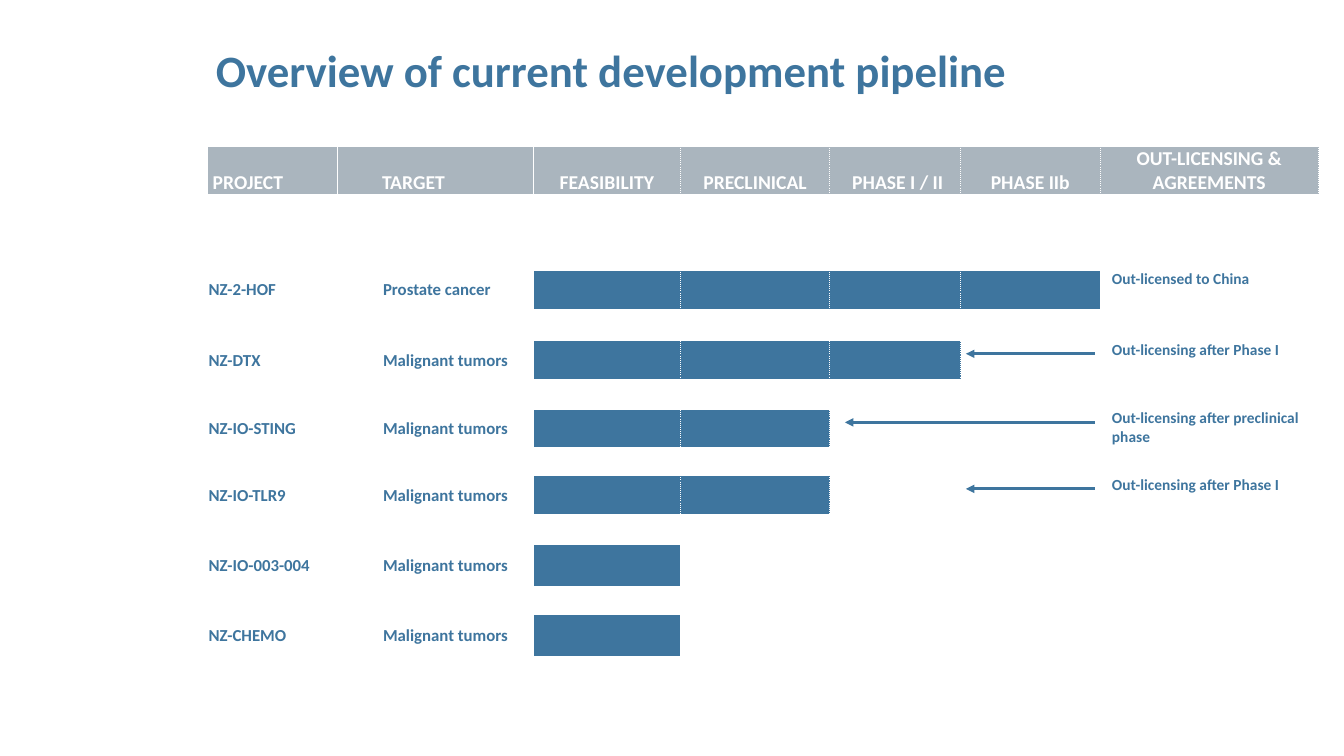
from lxml.etree import SubElement
from pptx import Presentation
from pptx.dml.color import RGBColor
from pptx.enum.shapes import MSO_CONNECTOR as Connector
from pptx.enum.text import MSO_ANCHOR as Anchor, PP_ALIGN as Align
from pptx.oxml.ns import qn
from pptx.util import Inches, Pt

COLORS = {"blue": "3E759E", "gray": "AAB5BE", "white": "FFFFFF"}
FONT = "Calibri"
LEFT, TOP = 2.06, 1.45
COLUMNS = [1.29, 0.44, 1.5, 1.46, 1.48, 1.3, 1.38, 2.17]
ROWS = [0.48, 0.3, 0.3, 0.15, 0.39, 0.31, 0.39, 0.29, 0.38, 0.28,
        0.39, 0.29, 0.42, 0.28, 0.42, 0.42, 0.28]
TARGET, FIRST_PHASE, NOTE = 2, 3, 7
FIRST_PROJECT, PROJECT_STEP = 4, 2
HEADERS = [
    (0, "PROJECT", Align.LEFT, 0.05),
    (1, "TARGET", Align.LEFT, 0.44),
    (3, "FEASIBILITY", Align.CENTER, 0.01),
    (4, "PRECLINICAL", Align.CENTER, 0.01),
    (5, "PHASE I / II", Align.CENTER, 0.06),
    (6, "PHASE IIb", Align.CENTER, 0.01),
    (7, "OUT-LICENSING & AGREEMENTS", Align.CENTER, 0.01),
]
PROJECTS = [
    ("NZ-2-HOF", "Prostate cancer", 4, "Out-licensed to China"),
    ("NZ-DTX", "Malignant tumors", 3, "Out-licensing after Phase I"),
    ("NZ-IO-STING", "Malignant tumors", 2, "Out-licensing after preclinical phase"),
    ("NZ-IO-TLR9", "Malignant tumors", 2, "Out-licensing after Phase I"),
    ("NZ-IO-003-004", "Malignant tumors", 1, ""),
    ("NZ-CHEMO", "Malignant tumors", 1, ""),
]
ARROWS = [(1, 6, 0.05), (2, 5, 0.15), (3, 6, 0.05)]


def rgb(name):
    """Return the named palette colour."""
    return RGBColor.from_string(COLORS[name])


def project_row(index):
    """Return the table row of a project."""
    return FIRST_PROJECT + PROJECT_STEP * index


def style_font(para, size, color):
    """Set the bold slide font on a paragraph."""
    para.font.name, para.font.size, para.font.bold = FONT, Pt(size), True
    para.font.color.rgb = rgb(color)


def write_cell(cell, text, size, color, anchor=Anchor.MIDDLE, align=Align.LEFT, indent=0.01):
    """Write one line of styled text into a cell."""
    cell.text = text
    cell.vertical_anchor = anchor
    cell.margin_left = Inches(indent)
    para = cell.text_frame.paragraphs[0]
    para.alignment = align
    style_font(para, size, color)


def fill_cell(cell, color):
    """Give a cell a solid fill."""
    cell.fill.solid()
    cell.fill.fore_color.rgb = rgb(color)


def add_border(cell, side, width, dash="solid"):
    """Add a white border to one side of a cell."""
    line = SubElement(cell._tc.get_or_add_tcPr(), qn(f"a:ln{side}"), w=str(Pt(width)))
    fill = SubElement(line, qn("a:solidFill"))
    SubElement(fill, qn("a:srgbClr"), val=COLORS["white"])
    SubElement(line, qn("a:prstDash"), val=dash)


def prepare_cell(cell, row, column):
    """Clear a cell's fill and margins and draw its borders."""
    cell.margin_left = cell.margin_right = Inches(0.01)
    cell.margin_top = cell.margin_bottom = 0
    for side, edge in (("L", column), ("R", column + 1)):
        if edge > FIRST_PHASE:
            add_border(cell, side, 0.5, "sysDot")
        elif edge > 0:
            add_border(cell, side, 1)
    if row == 0:
        add_border(cell, "B", 1.5)
    cell.fill.background()
    cell.text_frame.paragraphs[0].font.size = Pt(6)


def add_pipeline_table(page):
    """Add the empty pipeline grid and return its table."""
    frame = page.shapes.add_table(
        len(ROWS), len(COLUMNS), Inches(LEFT), Inches(TOP),
        Inches(sum(COLUMNS)), Inches(sum(ROWS)))
    table = frame.table
    table.first_row = table.horz_banding = False
    for column, width in zip(table.columns, COLUMNS):
        column.width = Inches(width)
    for row, height in zip(table.rows, ROWS):
        row.height = Inches(height)
    for row in range(len(ROWS)):
        for column in range(len(COLUMNS)):
            prepare_cell(table.cell(row, column), row, column)
        first, last = {0: (1, 2), 1: (1, 2), 2: (0, 2)}.get(row, (0, 1))
        table.cell(row, first).merge(table.cell(row, last))
    return table


def fill_headers(table):
    """Write the header row."""
    for column, text, align, indent in HEADERS:
        cell = table.cell(0, column)
        write_cell(cell, text, 14, "white", Anchor.BOTTOM, align, indent)
        fill_cell(cell, "gray")


def fill_project(table, index, name, target, phases, note):
    """Write a project's row and colour the phases it has reached."""
    row = project_row(index)
    write_cell(table.cell(row, 0), name, 12, "blue")
    write_cell(table.cell(row, TARGET), target, 12, "blue")
    for phase in range(phases):
        fill_cell(table.cell(row, FIRST_PHASE + phase), "blue")
    if note:
        write_cell(table.cell(row, NOTE), note, 11, "blue", Anchor.TOP, indent=0.12)


def add_title(page, text):
    """Add the slide title."""
    box = page.shapes.add_textbox(Inches(2.09), 0, Inches(10.48), Inches(TOP))
    frame = box.text_frame
    frame.word_wrap = True
    frame.vertical_anchor = Anchor.MIDDLE
    frame.margin_left = frame.margin_right = Inches(0.05)
    para = frame.paragraphs[0]
    para.text = text
    para.line_spacing = 0.9
    style_font(para, 32, "blue")


def add_arrow(page, index, column, gap):
    """Point from a project's note back to the left edge of a column."""
    start = LEFT + sum(COLUMNS[:NOTE]) - 0.05
    end = LEFT + sum(COLUMNS[:column]) + gap
    height = TOP + sum(ROWS[:project_row(index)]) + 0.13
    arrow = page.shapes.add_connector(
        Connector.STRAIGHT, Inches(start), Inches(height), Inches(end), Inches(height))
    arrow.line.color.rgb = rgb("blue")
    arrow.line.width = Pt(2)
    properties = arrow._element.spPr
    SubElement(properties.find(qn("a:ln")), qn("a:tailEnd"), type="triangle")
    SubElement(properties, qn("a:effectLst"))


def main():
    """Build and save the pipeline slide."""
    deck = Presentation()
    deck.slide_width, deck.slide_height = Inches(13.33), Inches(7.5)
    page = deck.slides.add_slide(deck.slide_layouts[6])
    table = add_pipeline_table(page)
    fill_headers(table)
    for index, project in enumerate(PROJECTS):
        fill_project(table, index, *project)
    add_title(page, "Overview of current development pipeline")
    for arrow in ARROWS:
        add_arrow(page, *arrow)
    deck.save("out.pptx")


if __name__ == "__main__":
    main()
